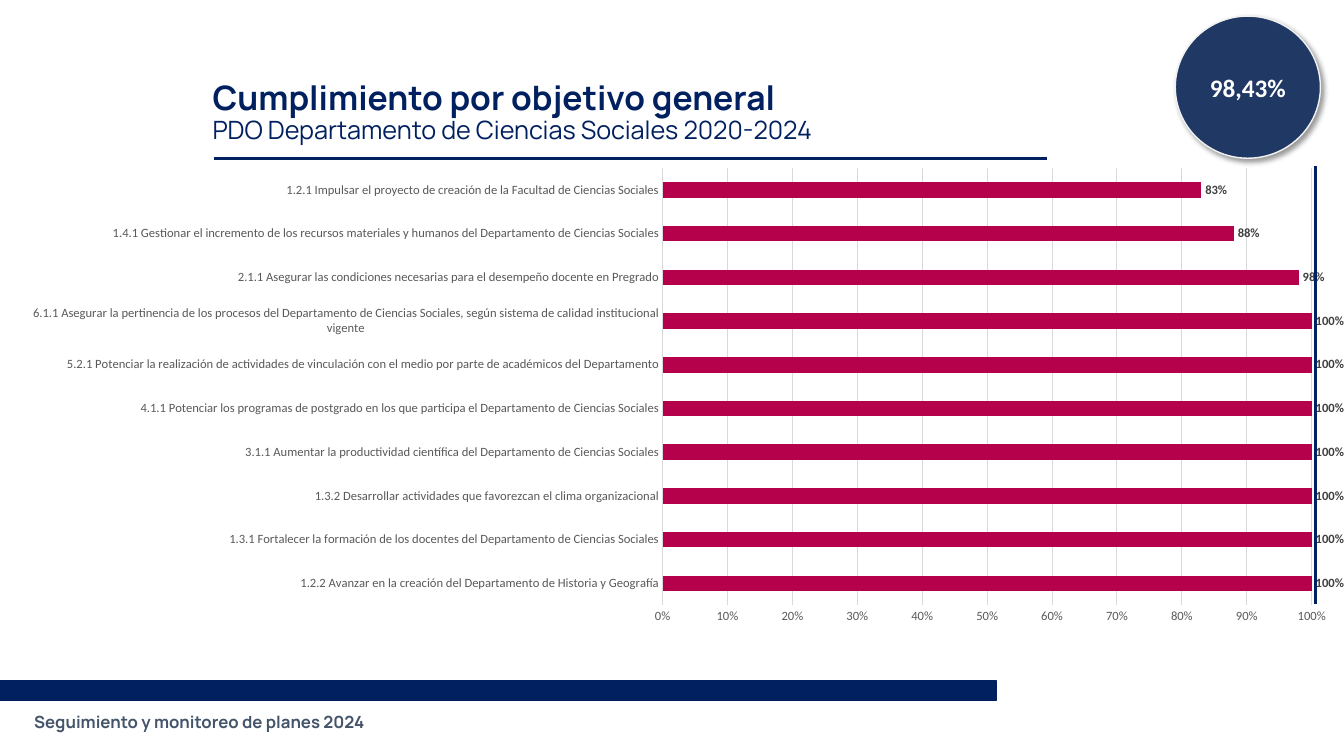
from collections import namedtuple

from lxml import etree
from pptx import Presentation
from pptx.chart.data import CategoryChartData
from pptx.dml.color import RGBColor
from pptx.enum import chart as charts, shapes, text
from pptx.oxml import parse_xml
from pptx.oxml.ns import nsdecls, qn
from pptx.util import Pt

NAVY = RGBColor(0x00, 0x20, 0x60)
BADGE_BLUE = RGBColor(0x20, 0x38, 0x64)
SLATE = RGBColor(0x44, 0x54, 0x6A)
CRIMSON = RGBColor(0xB5, 0x00, 0x4B)
DARK_GREY = RGBColor(0x40, 0x40, 0x40)
AXIS_GREY = RGBColor(0x59, 0x59, 0x59)
GRID_GREY = RGBColor(0xD9, 0xD9, 0xD9)
PALE_GREY = RGBColor(0xF2, 0xF2, 0xF2)
WHITE = RGBColor(0xFF, 0xFF, 0xFF)
BLACK = RGBColor(0x00, 0x00, 0x00)

Box = namedtuple("Box", "left top width height")

# Objectives from the bottom of the chart to the top
OBJECTIVES = [
    ("1.2.2 Avanzar en la creación del Departamento de Historia y Geografía", 1),
    ("1.3.1 Fortalecer la formación de los docentes del Departamento de Ciencias Sociales", 1),
    ("1.3.2 Desarrollar actividades que favorezcan el clima organizacional", 1),
    ("3.1.1 Aumentar la productividad científica del Departamento de Ciencias Sociales", 1),
    ("4.1.1 Potenciar los programas de postgrado en los que participa el "
     "Departamento de Ciencias Sociales", 1),
    ("5.2.1 Potenciar la realización de actividades de vinculación con el medio "
     "por parte de académicos del Departamento", 1),
    ("6.1.1 Asegurar la pertinencia de los procesos del Departamento de Ciencias "
     "Sociales, según sistema de calidad institucional vigente", 1),
    ("2.1.1 Asegurar las condiciones necesarias para el desempeño docente en Pregrado", 0.98),
    ("1.4.1 Gestionar el incremento de los recursos materiales y humanos del "
     "Departamento de Ciencias Sociales", 0.88),
    ("1.2.1 Impulsar el proyecto de creación de la Facultad de Ciencias Sociales", 0.83),
]


def style_font(font, name, size, color, bold=False):
    font.name, font.size, font.bold = name, Pt(size), bold
    font.color.rgb = color


def add_panel(page, kind, box, fill, line=None):
    panel = page.shapes.add_shape(kind, *map(Pt, box))
    panel.shadow.inherit = False
    panel.fill.solid()
    panel.fill.fore_color.rgb = fill
    if line is None:
        panel.line.fill.background()
    else:
        panel.line.color.rgb = line
        panel.line.width = Pt(1)
    return panel


def add_rule(page, x1, y1, x2, y2):
    rule = page.shapes.add_connector(shapes.MSO_CONNECTOR.STRAIGHT, Pt(x1), Pt(y1), Pt(x2), Pt(y2))
    rule.line.color.rgb = NAVY
    rule.line.width = Pt(2.25)
    etree.SubElement(rule.element.spPr, qn("a:effectLst"))


def write_lines(shape, lines, align):
    """Each line is (words, font name, size, colour, bold)."""
    frame = shape.text_frame
    frame.word_wrap = True
    frame.vertical_anchor = text.MSO_ANCHOR.MIDDLE
    frame.text = "\n".join(line[0] for line in lines)
    for para, line in zip(frame.paragraphs, lines):
        para.alignment = align
        style_font(para.runs[0].font, *line[1:])
    return frame


def add_footer(page, box):
    # Navy band, with the caption below it
    add_panel(page, shapes.MSO_SHAPE.RECTANGLE, Box(box.left, box.top, box.width, 14.4), NAVY, NAVY)
    caption = add_panel(page, shapes.MSO_SHAPE.RECTANGLE,
                        Box(box.left + 17.3, box.top + 15.8, 293, 27.4), WHITE)
    write_lines(caption, [("Seguimiento y monitoreo de planes 2024", "Manrope", 12, SLATE, True)],
                text.PP_ALIGN.LEFT)


def add_heading(page, box):
    rule_left, rule_top = box.left + 7.9, box.top + 84.2
    add_rule(page, rule_left, rule_top, rule_left + 595.4, rule_top)
    heading = page.shapes.add_textbox(*map(Pt, box))
    frame = write_lines(heading, [
        ("Cumplimiento por objetivo general", "Manrope", 24, NAVY, True),
        ("PDO Departamento de Ciencias Sociales 2020-2024", "Manrope", 18, NAVY, False),
    ], text.PP_ALIGN.LEFT)
    for para in frame.paragraphs:
        para.line_spacing = 0.9


def set_plot_layout(chart, left, top, width, height):
    plot_area = chart.element.chart.plotArea
    for layout in plot_area.findall(qn("c:layout")):
        plot_area.remove(layout)
    plot_area.insert(0, parse_xml(
        f'<c:layout {nsdecls("c")}><c:manualLayout><c:layoutTarget val="inner"/>'
        '<c:xMode val="edge"/><c:yMode val="edge"/>'
        f'<c:x val="{left}"/><c:y val="{top}"/><c:w val="{width}"/><c:h val="{height}"/>'
        '</c:manualLayout></c:layout>'))


def add_objectives_chart(page, box):
    data = CategoryChartData(number_format="0%")
    data.categories = [name for name, _ in OBJECTIVES]
    data.add_series("Series 1", [share for _, share in OBJECTIVES])
    chart = page.shapes.add_chart(charts.XL_CHART_TYPE.BAR_CLUSTERED, *map(Pt, box), data).chart
    chart.has_legend = chart.has_title = False
    style_font(chart.font, "Calibri", 10, BLACK)
    set_plot_layout(chart, 0.495, 0.021, 0.485, 0.909)

    # Axes
    for axis in (chart.category_axis, chart.value_axis):
        axis.major_tick_mark = axis.minor_tick_mark = charts.XL_TICK_MARK.NONE
        style_font(axis.tick_labels.font, "Calibri", 9, AXIS_GREY)
    scale = chart.value_axis
    scale.minimum_scale, scale.maximum_scale, scale.major_unit = 0, 1, 0.1
    scale.tick_labels.number_format = "0%"
    scale.tick_labels.number_format_is_linked = False
    scale.format.line.fill.background()
    for line in (chart.category_axis.format.line, scale.major_gridlines.format.line):
        line.color.rgb = GRID_GREY
        line.width = Pt(0.75)

    # Bars and their labels
    plot = chart.plots[0]
    plot.gap_width = 182
    plot.vary_by_categories = False
    series = plot.series[0]
    series.format.fill.solid()
    series.format.fill.fore_color.rgb = CRIMSON
    labels = series.data_labels
    labels.show_value = True
    labels.position = charts.XL_LABEL_POSITION.OUTSIDE_END
    labels.number_format, labels.number_format_is_linked = "0%", False
    style_font(labels.font, "Calibri", 9, DARK_GREY, True)

    # Target line at 100%
    target = box.left + 939.6
    add_rule(page, target, box.top + 5.8, target, box.top + 318.2)


def add_badge(page, box):
    badge = add_panel(page, shapes.MSO_SHAPE.OVAL, box, BADGE_BLUE, PALE_GREY)
    badge.element.spPr.find(qn("a:effectLst")).append(parse_xml(
        f'<a:outerShdw {nsdecls("a")} blurRad="{Pt(4)}" dist="{Pt(3)}" dir="2700000" '
        'algn="tl" rotWithShape="0"><a:srgbClr val="000000"><a:alpha val="40000"/></a:srgbClr>'
        '</a:outerShdw>'))
    write_lines(badge, [("98,43%", "Calibri", 18, WHITE, True)], text.PP_ALIGN.CENTER)


def main():
    deck = Presentation()
    deck.slide_width, deck.slide_height = Pt(960), Pt(540)
    page = deck.slides.add_slide(deck.slide_layouts[6])
    add_footer(page, Box(0, 486, 711.4, 54))
    add_heading(page, Box(144.7, 28.8, 749.5, 104.4))
    add_objectives_chart(page, Box(0, 113, 960, 343.4))
    add_badge(page, Box(839.5, 11.5, 103.7, 101.5))
    deck.save("out.pptx")


if __name__ == "__main__":
    main()
